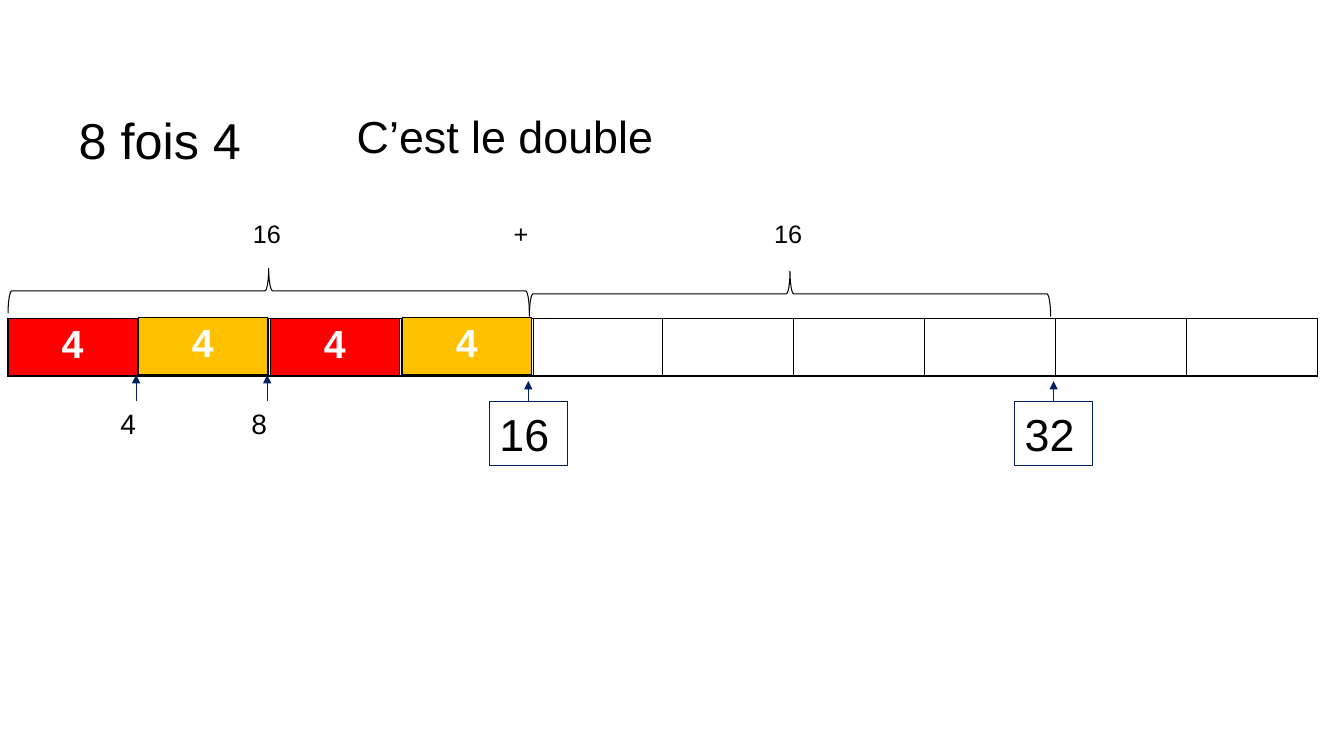
from collections import namedtuple

from lxml import etree
from pptx import Presentation
from pptx import util as u
from pptx.dml.color import RGBColor
from pptx.enum import shapes, text
from pptx.oxml import parse_xml
from pptx.oxml.ns import nsdecls, qn

COLORS = {"ink": "000000", "navy": "002060", "red": "FF0000",
          "amber": "FFC000", "white": "FFFFFF"}
FONT = "Arial"
WIDTH, HEIGHT = 13.33, 7.5
STRIP_COLUMNS = [1.3] * 3 + [1.31, 1.28] + [1.3] * 5
CARD_STEP = 1.3
CARD_WIDTH = 1.28
LABEL_WIDTH = 0.51
Box = namedtuple("Box", "left top width height")
Card = namedtuple("Card", "left rise fill")
CARDS = (Card(1.3, 0, "amber"), Card(3.9, 0, "amber"),
         Card(1.29, 0.01, "amber"), Card(0, 0, "red"),
         Card(3.91, 0.01, "amber"), Card(2.6, 0, "red"))


def color(name):
    return RGBColor.from_string(COLORS[name])


def inches(box):
    return [u.Inches(length) for length in box]


def write(frame, words, size, ink="ink", bold=False, align=text.PP_ALIGN.LEFT):
    frame.text = words
    para = frame.paragraphs[0]
    para.alignment = align
    para.font.name = FONT
    para.font.size = u.Pt(size)
    para.font.bold = bold
    para.font.color.rgb = color(ink)


def add_label(page, box, words, size):
    frame = page.shapes.add_textbox(*inches(box)).text_frame
    frame.word_wrap = True
    write(frame, words, size)


def add_bar(page, box, widths):
    table = page.shapes.add_table(1, len(widths), *inches(box)).table
    table.first_row = table.horz_banding = False
    for column, width in zip(table.columns, widths):
        column.width = u.Inches(width)
    for cell in table.iter_cells():
        cell.fill.background()
        properties = cell._tc.get_or_add_tcPr()
        for index, side in enumerate(("lnL", "lnR", "lnT", "lnB")):
            properties.insert(index, parse_xml(
                f'<a:{side} {nsdecls("a")} w="12700"><a:solidFill>'
                f'<a:srgbClr val="{COLORS["ink"]}"/></a:solidFill></a:{side}>'))
    return table


def add_card(page, box, fill):
    cell = add_bar(page, box, [box.width]).cell(0, 0)
    cell.fill.solid()
    cell.fill.fore_color.rgb = color(fill)
    write(cell.text_frame, "4", 28, "white", True, text.PP_ALIGN.CENTER)


def add_arrow(page, x, bottom, top, source=None):
    arrow = page.shapes.add_connector(
        shapes.MSO_CONNECTOR.STRAIGHT, *inches((x, bottom, x, top)))
    if source is not None:
        arrow.begin_connect(source, 0)
    arrow.line.color.rgb = color("navy")
    arrow.line.width = u.Pt(0.75)
    etree.SubElement(arrow.line._get_or_add_ln(), qn("a:tailEnd"), type="triangle")
    etree.SubElement(arrow._element.spPr, qn("a:effectLst"))


def add_outline(page, preset, box, ink):
    shape = page.shapes.add_shape(preset, *inches(box))
    shape.shadow.inherit = False
    shape.fill.background()
    shape.line.color.rgb = color(ink)
    shape.line.width = u.Pt(0.75)
    return shape


def add_heading(page, box):
    title = page.shapes.title
    title.left, title.top, title.width, title.height = inches(
        box._replace(width=1.97))
    title.text_frame.vertical_anchor = text.MSO_ANCHOR.TOP
    write(title.text_frame, "8 fois 4", 36)
    left = box.left + 2.76
    add_label(page, Box(left, box.top, box.width - 2.76, 0.64),
              "C’est le double", 32)


def add_strip(page, box):
    add_bar(page, box, STRIP_COLUMNS)
    for card in CARDS:
        add_card(page, Box(box.left + card.left, box.top - card.rise,
                           CARD_WIDTH, box.height), card.fill)


def add_sum(page, box):
    span = box.width / 2
    depth = 0.45
    for index, drop in enumerate((0, 0.03)):
        center = box.left + (index + 0.5) * span
        brace_top = box.top + box.height - depth + drop
        brace = add_outline(
            page, shapes.MSO_SHAPE.LEFT_BRACE,
            Box(center - depth / 2, brace_top + (depth - span) / 2, depth, span), "ink")
        brace.rotation = 90
    for index, words in enumerate(("16", "+", "16")):
        left = box.left + (index + 1) * span / 2 - LABEL_WIDTH / 2
        add_label(page, Box(left, box.top, LABEL_WIDTH, 0.4), words, 18)


def add_marks(page, box):
    label_top = box.top + 0.26
    for count in (1, 2):
        x = box.left + count * CARD_STEP - 0.03
        add_label(page, Box(x - LABEL_WIDTH / 2, label_top, LABEL_WIDTH, 0.44),
                  str(4 * count), 20)
        add_arrow(page, x, label_top, box.top)
    width = 0.77
    for x, words in ((box.left + 5.16, "16"), (box.left + 10.37, "32")):
        result = add_outline(page, shapes.MSO_SHAPE.RECTANGLE,
                             Box(x - width / 2, label_top, width,
                                 box.height - 0.26), "navy")
        result.text_frame.word_wrap = True
        write(result.text_frame, words, 32)
        add_arrow(page, x, label_top, label_top - 0.2, result)


def main():
    deck = Presentation()
    deck.slide_width, deck.slide_height = u.Inches(WIDTH), u.Inches(HEIGHT)
    page = deck.slides.add_slide(deck.slide_layouts[5])
    add_heading(page, Box(0.68, 1.03, 5.99, 0.71))
    add_strip(page, Box(0.08, 3.16, 12.95, 0.57))
    add_sum(page, Box(0.08, 2.12, 10.34, 0.99))
    add_marks(page, Box(0.08, 3.72, 12.95, 0.9))
    deck.save("out.pptx")


if __name__ == "__main__":
    main()
